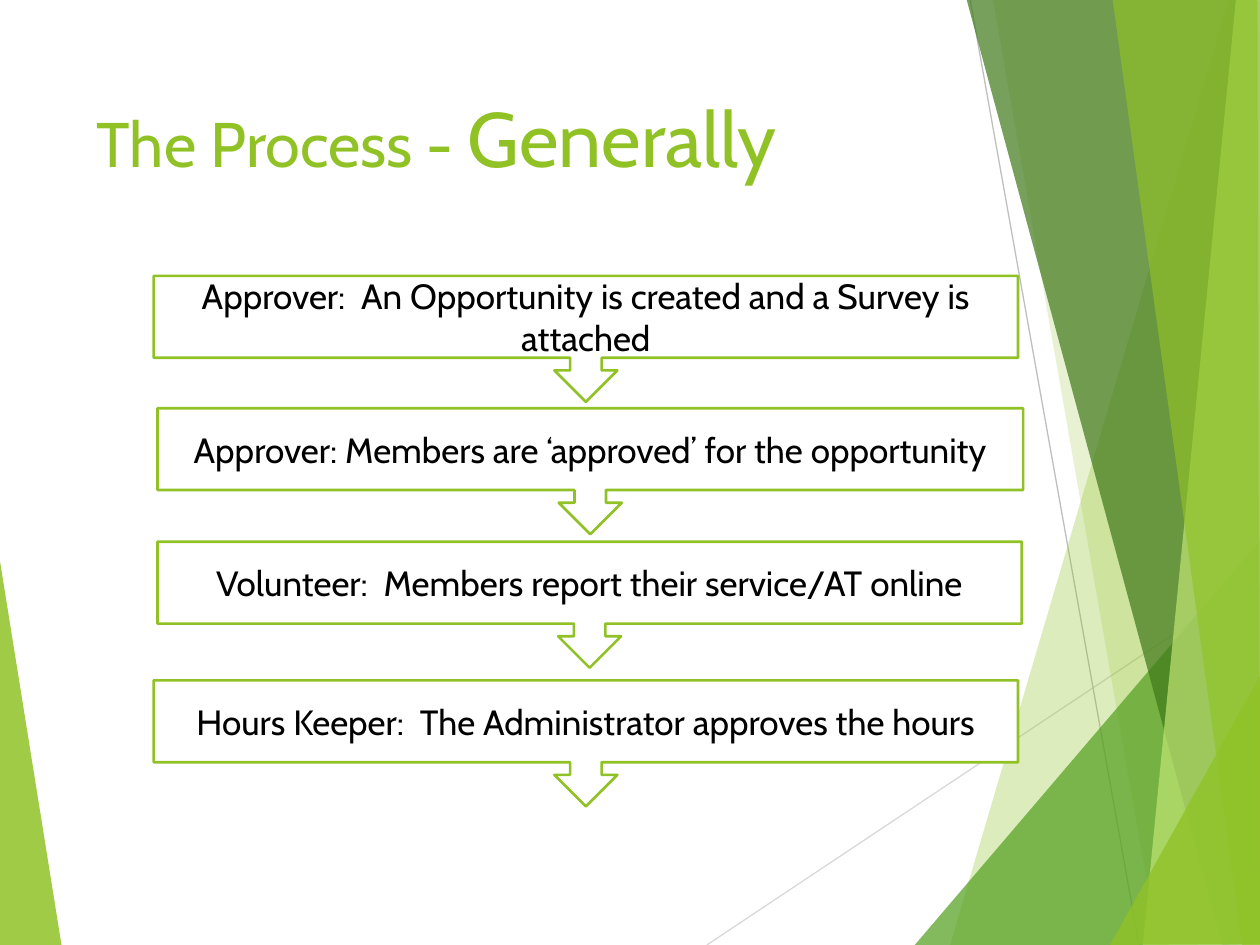
"""Build a slide showing a four-step approval process over a faceted green backdrop."""
from dataclasses import dataclass

from pptx import Presentation
from pptx.dml.color import RGBColor as Color
from pptx.enum.shapes import MSO_CONNECTOR as Connector, MSO_SHAPE as Shape
from pptx.enum.text import MSO_ANCHOR as Anchor, PP_ALIGN as Align
from pptx.oxml.ns import qn
from pptx.oxml.xmlchemy import OxmlElement
from pptx.util import Pt

PX = 9144
Point = tuple[int, int]


@dataclass(frozen=True)
class Theme:
    font: str = "Cabin"
    lime: str = "90C226"
    green: str = "54A021"
    forest: str = "3F7819"
    pale: str = "C0E474"
    white: str = "FFFFFF"
    black: str = "000000"
    light_rule: str = "D9D9D9"
    dark_rule: str = "BFBFBF"
    title_size: int = 36
    emphasis_size: int = 44
    step_size: int = 20
    rule_width: float = 0.75
    border_width: float = 1.5


@dataclass(frozen=True)
class Facet:
    points: tuple[Point, ...]
    color: str
    opacity: int


@dataclass(frozen=True)
class Rule:
    start: Point
    end: Point
    color: str


@dataclass(frozen=True)
class Step:
    left: int
    top: int
    width: int
    text: str


THEME = Theme()
LEFT_FACET = Facet(((-1, 439), (49, 751), (-1, 750)), THEME.lime, 85)
RULES = (
    Rule((561, 750), (1001, 457), THEME.light_rule),
    Rule((770, 0), (904, 750), THEME.dark_rule),
)
RIGHT_FACETS = (
    Facet(((975, 0), (754, 750), (1002, 751), (1001, 1)), THEME.lime, 30),
    Facet(((788, -1), (919, 750), (1001, 750), (1001, -1)), THEME.lime, 20),
    Facet(((726, 750), (1000, 429), (1001, 750)), THEME.green, 72),
    Facet(((767, -1), (970, 750), (1001, 749), (1001, -1)), THEME.forest, 70),
    Facet(((981, -1), (907, 750), (1001, 750), (1000, -1)), THEME.pale, 70),
    Facet(((883, -1), (986, 750), (1000, 750), (998, -1)), THEME.lime, 65),
    Facet(((881, 750), (1001, 535), (1001, 749)), THEME.lime, 80),
)
STEP_HEIGHT = 100
STEPS = (
    Step(122, 219, 686, "Approver:  An Opportunity is created and a Survey is attached"),
    Step(125, 324, 687, "Approver: Members are ‘approved’ for the opportunity"),
    Step(125, 430, 686, "Volunteer:  Members report their service/AT online"),
    Step(122, 540, 686, "Hours Keeper:  The Administrator approves the hours"),
)


def rgb(value: str) -> Color:
    """Turn a hex string into a colour."""
    return Color.from_string(value)


def add_span(para, text: str, *, size: int, color: str) -> None:
    """Append formatted text to a paragraph."""
    span = para.add_run()
    span.text = text
    span.font.name = THEME.font
    span.font.size = Pt(size)
    span.font.color.rgb = rgb(color)


def draw_facet(page, facet: Facet) -> None:
    """Draw a translucent polygon without an outline."""
    builder = page.shapes.build_freeform(*facet.points[0], scale=PX)
    builder.add_line_segments(facet.points[1:], close=True)
    shape = builder.convert_to_shape()
    shape.shadow.inherit = False
    shape.line.fill.background()
    shape.fill.solid()
    shape.fill.fore_color.rgb = rgb(facet.color)
    alpha = OxmlElement("a:alpha")
    alpha.set("val", str(facet.opacity * 1000))
    shape.fill._xPr.find(f"{qn('a:solidFill')}/{qn('a:srgbClr')}").append(alpha)


def draw_rule(page, rule: Rule) -> None:
    """Draw a thin straight line."""
    ends = (value * PX for value in rule.start + rule.end)
    line = page.shapes.add_connector(Connector.STRAIGHT, *ends)
    line.line.color.rgb = rgb(rule.color)
    line.line.width = Pt(THEME.rule_width)
    line._element.spPr.append(OxmlElement("a:effectLst"))


def draw_title(page) -> None:
    """Draw the title with its enlarged last word."""
    box = page.shapes.add_textbox(67 * PX, 67 * PX, 694 * PX, 144 * PX)
    box.text_frame.word_wrap = True
    para = box.text_frame.paragraphs[0]
    add_span(para, "The Process - ", size=THEME.title_size, color=THEME.lime)
    add_span(para, "Generally", size=THEME.emphasis_size, color=THEME.lime)


def draw_step(page, step: Step) -> None:
    """Draw one process step as a down-arrow callout."""
    box = page.shapes.add_shape(
        Shape.DOWN_ARROW_CALLOUT,
        step.left * PX, step.top * PX, step.width * PX, STEP_HEIGHT * PX,
    )
    box.shadow.inherit = False
    box.fill.solid()
    box.fill.fore_color.rgb = rgb(THEME.white)
    box.line.color.rgb = rgb(THEME.lime)
    box.line.width = Pt(THEME.border_width)
    box.text_frame.word_wrap = True
    box.text_frame.vertical_anchor = Anchor.MIDDLE
    para = box.text_frame.paragraphs[0]
    para.alignment = Align.CENTER
    add_span(para, step.text, size=THEME.step_size, color=THEME.black)


def main() -> None:
    """Assemble and save the deck."""
    deck = Presentation()
    deck.slide_width, deck.slide_height = 1000 * PX, 750 * PX
    page = deck.slides.add_slide(deck.slide_layouts[6])
    draw_facet(page, LEFT_FACET)
    for rule in RULES:
        draw_rule(page, rule)
    for facet in RIGHT_FACETS:
        draw_facet(page, facet)
    draw_title(page)
    for step in STEPS:
        draw_step(page, step)
    deck.save("out.pptx")


if __name__ == "__main__":
    main()
